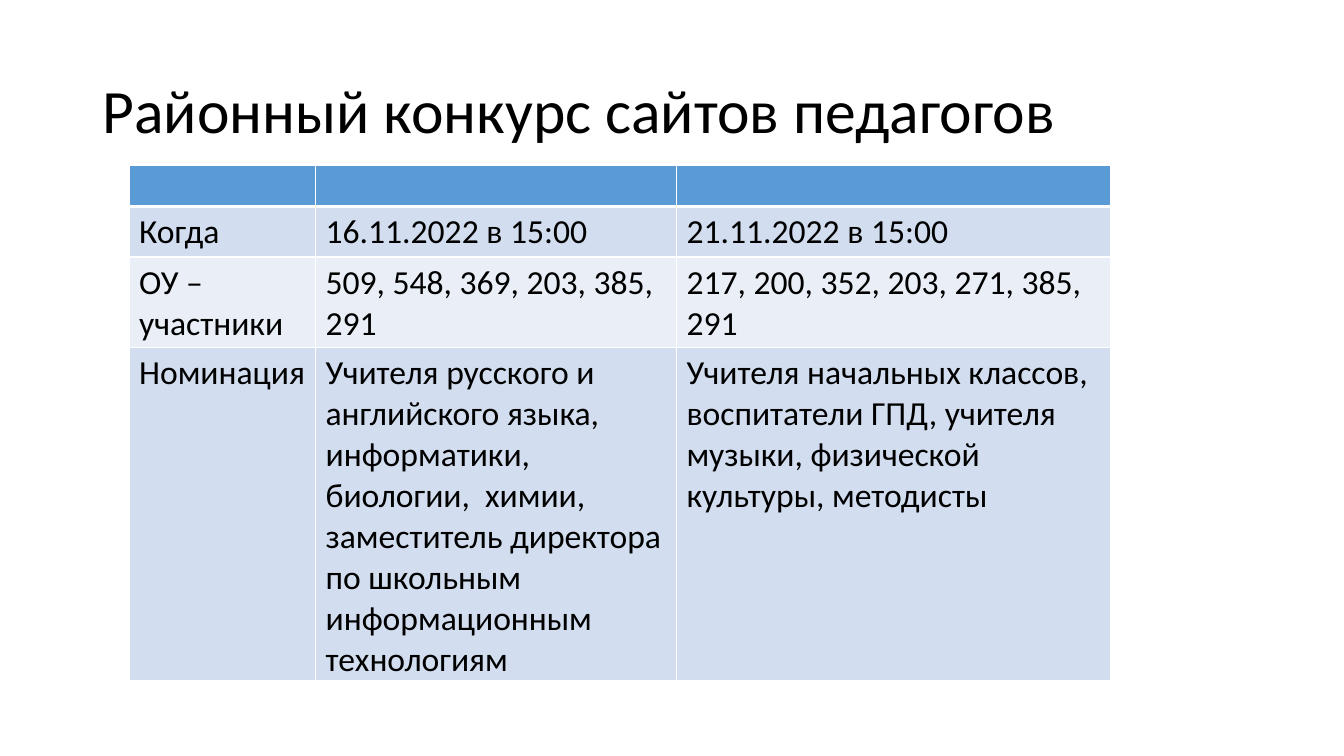
from lxml import etree
from pptx import Presentation
from pptx.dml.color import RGBColor
from pptx.enum.text import MSO_ANCHOR
from pptx.oxml.ns import qn
from pptx.util import Inches, Pt

MIDDLE = MSO_ANCHOR.MIDDLE
FONT = "Calibri"
COLORS = {
    "text": "000000",
    "header": "5B9BD5",
    "odd": "D2DEEF",
    "even": "EAEFF7",
    "border": "FFFFFF",
}


def write(frame, text, size):
    run = frame.paragraphs[0].add_run()
    run.text = text
    for attribute, value in {"name": FONT, "size": Pt(size)}.items():
        setattr(run.font, attribute, value)
    run.font.color.rgb = RGBColor.from_string(COLORS["text"])


def add_border(cell, side, points):
    line = etree.SubElement(cell._tc.get_or_add_tcPr(), qn(f"a:ln{side}"), w=str(Pt(points)))
    fill = etree.SubElement(line, qn("a:solidFill"))
    etree.SubElement(fill, qn("a:srgbClr"), val=COLORS["border"])


prs = Presentation()
prs.slide_width = Inches(13.33)
prs.slide_height = Inches(7.5)
slide = prs.slides.add_slide(prs.slide_layouts[6])

heading = slide.shapes.add_textbox(Inches(0.92), Inches(0.4), Inches(11.5), Inches(1.45)).text_frame
for attribute, value in {"word_wrap": True, "vertical_anchor": MIDDLE}.items():
    setattr(heading, attribute, value)
write(heading, "Районный конкурс сайтов педагогов", 44)
heading.paragraphs[0].line_spacing = 0.9

schedule_rows = [
    ("header", ["", "", ""]),
    ("odd", ["Когда", "16.11.2022 в 15:00", "21.11.2022 в 15:00"]),
    ("even", ["ОУ – участники", "509, 548, 369, 203, 385, 291", "217, 200, 352, 203, 271, 385, 291"]),
    ("odd", [
        "Номинация",
        "Учителя русского и английского языка, информатики, биологии,  химии, "
        "заместитель директора по школьным информационным технологиям",
        "Учителя начальных классов, воспитатели ГПД, учителя музыки, "
        "физической культуры, методисты",
    ]),
]
column_widths = [1.85, 3.58, 4.31]
row_height = 0.41

schedule = slide.shapes.add_table(
    len(schedule_rows), len(column_widths), Inches(1.28), Inches(1.64),
    Inches(sum(column_widths)), Inches(row_height * len(schedule_rows)),
).table
for column, width in zip(schedule.columns, column_widths):
    column.width = Inches(width)

for row_index, (band, texts) in enumerate(schedule_rows):
    schedule.rows[row_index].height = Inches(row_height)
    for column_index, text in enumerate(texts):
        cell = schedule.cell(row_index, column_index)
        top = 3 if row_index == 1 else 1
        bottom = 3 if row_index == 0 else 1
        for side, points in {"L": 1, "R": 1, "T": top, "B": bottom}.items():
            add_border(cell, side, points)
        cell.fill.solid()
        cell.fill.fore_color.rgb = RGBColor.from_string(COLORS[band])
        if text:
            write(cell.text_frame, text, 24)

prs.save("out.pptx")
